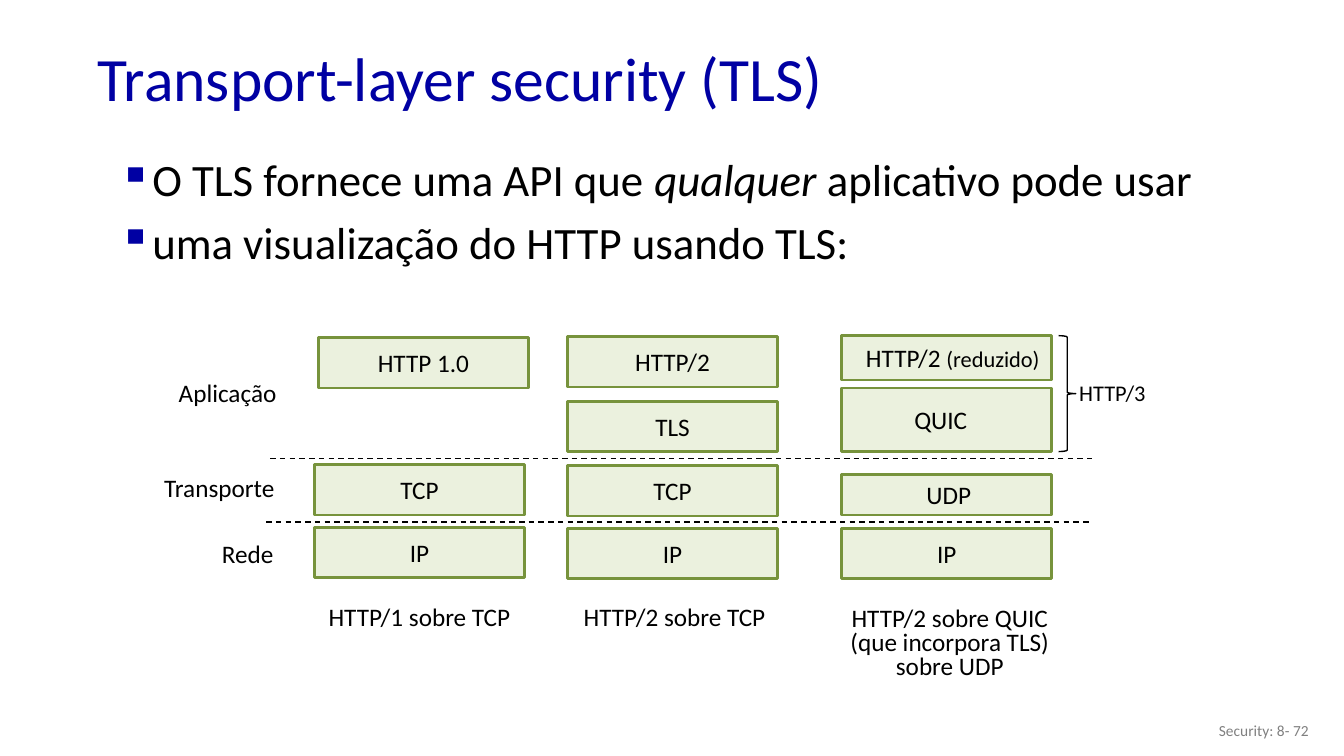
import pptx
import pptx.util
import pptx.dml.color
import pptx.enum.dml
import pptx.enum.shapes
import pptx.enum.text
import pptx.oxml.ns
from lxml import etree
from pptx.util import Inches

COLORS = {"title": "0000A3", "text": "000000", "footer": "808080",
          "layer": "EBF1DE", "border": "77933C"}
ALIGN = pptx.enum.text.PP_ALIGN
ANCHOR = pptx.enum.text.MSO_ANCHOR
SHAPE = pptx.enum.shapes.MSO_SHAPE


def rgb(name):
    return pptx.dml.color.RGBColor.from_string(COLORS[name])


def child(parent, tag, **attrs):
    return etree.SubElement(parent, pptx.oxml.ns.qn(tag), attrs)


def add_bullet(p):
    pPr = p._p.get_or_add_pPr()
    indent = Inches(0.31)
    pPr.set("marL", str(indent))
    pPr.set("indent", str(-indent))
    child(child(pPr, "a:buClr"), "a:srgbClr", val=COLORS["title"])
    child(pPr, "a:buChar", char="▪")


def write(tf, paragraphs, size=18, color="text", align=ALIGN.LEFT,
          anchor=ANCHOR.TOP, spacing=None, before=0, bullet=False, wrap=True):
    tf.word_wrap = wrap
    tf.vertical_anchor = anchor
    for i, runs in enumerate(paragraphs):
        p = tf.paragraphs[0] if i == 0 else tf.add_paragraph()
        p.alignment = align
        if spacing:
            p.line_spacing = spacing
        if i and before:
            p.space_before = pptx.util.Pt(before)
        if bullet:
            add_bullet(p)
        for text, fmt in runs:
            r = p.add_run()
            r.text = text
            r.font.name = "Calibri"
            r.font.size = pptx.util.Pt(fmt.get("size", size))
            r.font.color.rgb = rgb(color)
            if fmt.get("italic"):
                r.font.italic = True


def add_text(s, box, *lines, **fmt):
    paragraphs = [[(t, {})] if isinstance(t, str) else t for t in lines]
    sp = s.shapes.add_textbox(*map(Inches, box))
    write(sp.text_frame, paragraphs, **fmt)


def add_layer(s, x, y, runs, height=0.5, shift=0):
    sp = s.shapes.add_shape(SHAPE.RECTANGLE, Inches(x), Inches(y), Inches(2.08), Inches(height))
    sp.shadow.inherit = False
    sp.fill.solid()
    sp.fill.fore_color.rgb = rgb("layer")
    sp.line.color.rgb = rgb("border")
    sp.line.width = pptx.util.Pt(2)
    tf = sp.text_frame
    tf.margin_top = tf.margin_bottom = 0
    tf.margin_left = Inches(max(0, 2 * shift))
    tf.margin_right = Inches(max(0, -2 * shift))
    write(tf, [runs], align=ALIGN.CENTER, anchor=ANCHOR.MIDDLE)


def add_divider(s, x1, x2, y):
    c = s.shapes.add_connector(pptx.enum.shapes.MSO_CONNECTOR.STRAIGHT,
                               Inches(x1), Inches(y), Inches(x2), Inches(y))
    c.line.color.rgb = rgb("text")
    c.line.width = pptx.util.Pt(1)
    c.line.dash_style = pptx.enum.dml.MSO_LINE.DASH
    child(c._element.spPr, "a:effectLst")


def add_brace(s, x, y, w, h):
    sp = s.shapes.add_shape(SHAPE.RIGHT_BRACE, *map(Inches, (x, y, w, h)))
    sp.shadow.inherit = False
    sp.fill.background()
    sp.line.color.rgb = rgb("text")
    sp.line.width = pptx.util.Pt(1)


def main():
    prs = pptx.Presentation()
    prs.slide_width, prs.slide_height = Inches(13.33), Inches(7.5)
    s = prs.slides.add_slide(prs.slide_layouts[6])

    add_text(s, (0.87, 0.32, 11.5, 0.98), "Transport-layer security (TLS)",
             size=44, color="title", anchor=ANCHOR.MIDDLE, spacing=0.9)
    add_text(s, (1.08, 1.52, 11.9, 1.78),
             [("O TLS fornece uma API que ", {}), ("qualquer", {"italic": True}),
              (" aplicativo pode usar", {})],
             "uma visualização do HTTP usando TLS:",
             size=32, spacing=0.9, before=10, bullet=True)

    for x, y, label in [(3.16, 3.35, "HTTP 1.0"), (3.12, 4.61, "TCP"), (3.12, 5.23, "IP"),
                        (5.63, 3.34, "HTTP/2"), (5.63, 3.98, "TLS"),
                        (5.63, 4.62, "TCP"), (5.63, 5.24, "IP"), (8.35, 5.24, "IP")]:
        add_layer(s, x, y, [(label, {})])
    add_layer(s, 8.35, 3.33, [("HTTP/2 ", {}), ("(reduzido)", {"size": 16})],
              height=0.44, shift=0.06)
    add_layer(s, 8.35, 3.85, [("QUIC", {})], height=0.63, shift=-0.06)
    add_layer(s, 8.35, 4.71, [("UDP", {})], height=0.4, shift=0.02)

    add_divider(s, 2.68, 10.83, 4.55)
    add_divider(s, 2.64, 10.81, 5.18)
    add_brace(s, 10.5, 3.33, 0.17, 1.15)
    add_text(s, (10.48, 3.71, 0.98, 0.37), "HTTP/3", size=16, align=ALIGN.RIGHT)

    for right, y, label in [(2.84, 3.69, "Aplicação"), (2.82, 4.64, "Transporte"),
                            (2.81, 5.29, "Rede")]:
        add_text(s, (right - 1.5, y, 1.5, 0.4), label, align=ALIGN.RIGHT)

    add_text(s, (3.14, 5.92, 2.04, 0.4), "HTTP/1 sobre TCP", align=ALIGN.CENTER, wrap=False)
    add_text(s, (5.65, 5.92, 2.08, 0.4), "HTTP/2 sobre TCP", align=ALIGN.CENTER)
    add_text(s, (8.32, 5.98, 2.2, 0.83), "HTTP/2 sobre QUIC", "(que incorpora TLS)",
             "sobre UDP", align=ALIGN.CENTER, spacing=0.8, wrap=False)
    add_text(s, (10.08, 7.05, 3, 0.4), "Security: 8- 72", size=11, color="footer",
             align=ALIGN.RIGHT, anchor=ANCHOR.MIDDLE)

    prs.save("out.pptx")


if __name__ == "__main__":
    main()
